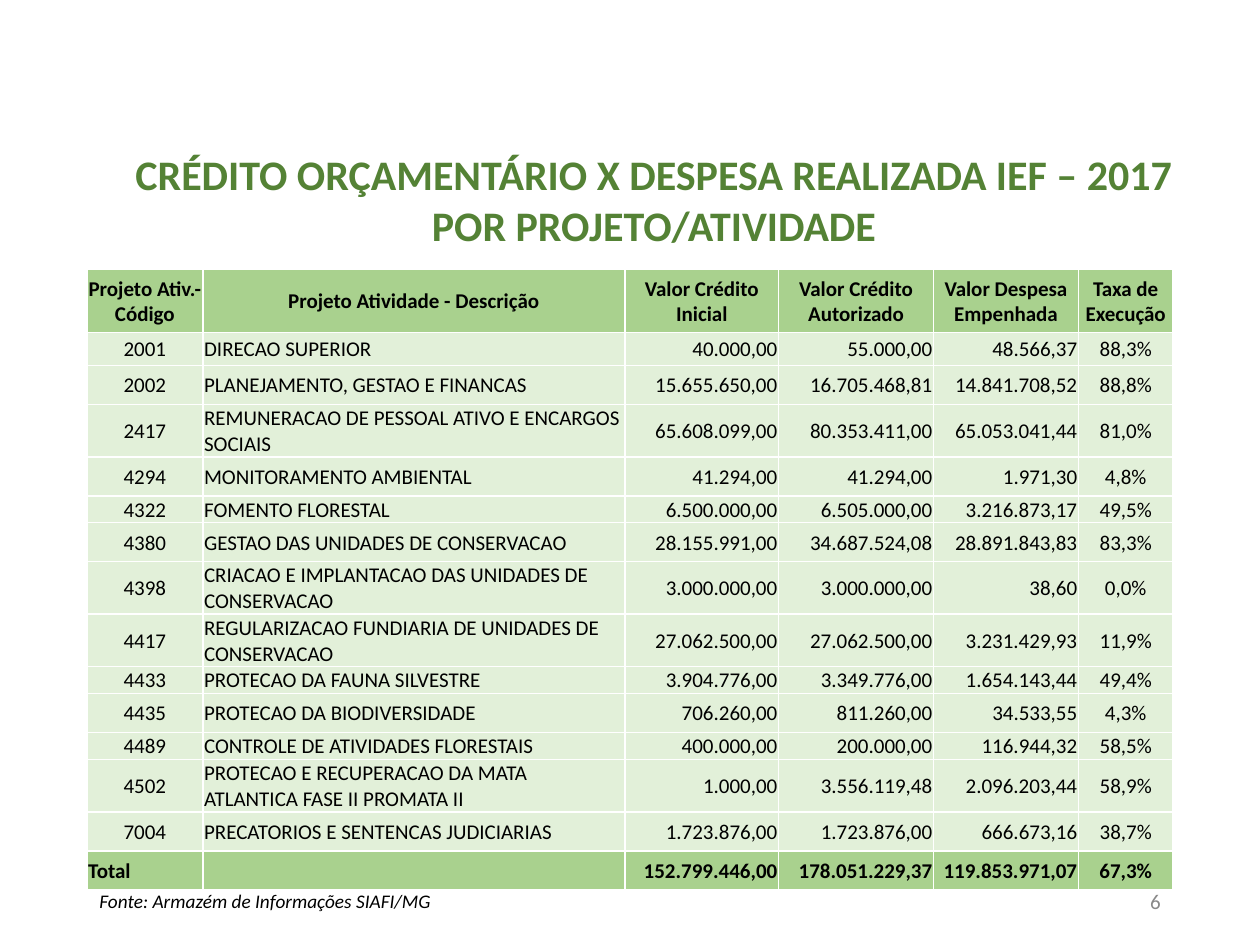
from typing import NamedTuple

from lxml import etree
from pptx import Presentation
from pptx.dml.color import RGBColor
from pptx.enum.text import MSO_ANCHOR, MSO_AUTO_SIZE, PP_ALIGN
from pptx.oxml.ns import qn
from pptx.util import Emu, Inches, Pt

LEFT, CENTER, RIGHT = PP_ALIGN.LEFT, PP_ALIGN.CENTER, PP_ALIGN.RIGHT
TOP, MIDDLE = MSO_ANCHOR.TOP, MSO_ANCHOR.MIDDLE
TITLE_ONLY = 5
WIDTH, HEIGHT = Inches(10), Inches(7.5)
FONT = "Calibri"
COLORS = {
    "title": "548235",
    "band": "A9D18E",
    "body": "E2F0D9",
    "text": "000000",
    "border": "FFFFFF",
    "number": "898989",
}


class Area(NamedTuple):
    """Position and size in percent of the slide's size."""
    left: float
    top: float
    width: float
    height: float


class Column(NamedTuple):
    heading: str
    width: float
    align: PP_ALIGN


class Project(NamedTuple):
    height: float
    code: str
    name: str
    initial: str
    authorized: str
    spent: str
    rate: str


TITLE_AREA = Area(6.9, 15.07, 90, 11.6)
TABLE_AREA = Area(6.9, 28.53, 86.2, 65.47)
SOURCE_AREA = Area(6.9, 94, 79.5, 2.67)
NUMBER_AREA = Area(70.6, 92.67, 22.5, 5.33)

TITLE = ["CRÉDITO ORÇAMENTÁRIO X DESPESA REALIZADA IEF – 2017", "POR PROJETO/ATIVIDADE"]
COLUMNS = [
    Column("Projeto Ativ.- Código", 9.2, CENTER),
    Column("Projeto Atividade - Descrição", 33.5, LEFT),
    Column("Valor Crédito Inicial", 12.2, RIGHT),
    Column("Valor Crédito Autorizado", 12.3, RIGHT),
    Column("Valor Despesa Empenhada", 11.5, RIGHT),
    Column("Taxa de Execução", 7.5, CENTER),
]
# Row heights in percent of the slide's height
HEADER, FIRST, NORMAL, SLIM, TALL = 6.67, 3.47, 4.13, 2.13, 4.67
PROJECTS = [
    Project(FIRST, "2001", "DIRECAO SUPERIOR",
            "40.000,00", "55.000,00", "48.566,37", "88,3%"),
    Project(NORMAL, "2002", "PLANEJAMENTO, GESTAO E FINANCAS",
            "15.655.650,00", "16.705.468,81", "14.841.708,52", "88,8%"),
    Project(NORMAL, "2417", "REMUNERACAO DE PESSOAL ATIVO E ENCARGOS SOCIAIS",
            "65.608.099,00", "80.353.411,00", "65.053.041,44", "81,0%"),
    Project(NORMAL, "4294", "MONITORAMENTO AMBIENTAL",
            "41.294,00", "41.294,00", "1.971,30", "4,8%"),
    Project(SLIM, "4322", "FOMENTO FLORESTAL",
            "6.500.000,00", "6.505.000,00", "3.216.873,17", "49,5%"),
    Project(NORMAL, "4380", "GESTAO DAS UNIDADES DE CONSERVACAO",
            "28.155.991,00", "34.687.524,08", "28.891.843,83", "83,3%"),
    Project(NORMAL, "4398", "CRIACAO E IMPLANTACAO DAS UNIDADES DE CONSERVACAO",
            "3.000.000,00", "3.000.000,00", "38,60", "0,0%"),
    Project(TALL, "4417", "REGULARIZACAO FUNDIARIA DE UNIDADES DE CONSERVACAO",
            "27.062.500,00", "27.062.500,00", "3.231.429,93", "11,9%"),
    Project(SLIM, "4433", "PROTECAO DA FAUNA SILVESTRE",
            "3.904.776,00", "3.349.776,00", "1.654.143,44", "49,4%"),
    Project(NORMAL, "4435", "PROTECAO DA BIODIVERSIDADE",
            "706.260,00", "811.260,00", "34.533,55", "4,3%"),
    Project(SLIM, "4489", "CONTROLE DE ATIVIDADES FLORESTAIS",
            "400.000,00", "200.000,00", "116.944,32", "58,5%"),
    Project(NORMAL, "4502", "PROTECAO E RECUPERACAO DA MATA ATLANTICA FASE II PROMATA II",
            "1.000,00", "3.556.119,48", "2.096.203,44", "58,9%"),
    Project(NORMAL, "7004", "PRECATORIOS E SENTENCAS JUDICIARIAS",
            "1.723.876,00", "1.723.876,00", "666.673,16", "38,7%"),
]
TOTAL = Project(NORMAL, "Total", "",
                "152.799.446,00", "178.051.229,37", "119.853.971,07", "67,3%")


def across(percent: float) -> Emu:
    return Emu(round(WIDTH * percent / 100))


def down(percent: float) -> Emu:
    return Emu(round(HEIGHT * percent / 100))


def bounds(area: Area) -> tuple[Emu, Emu, Emu, Emu]:
    return across(area.left), down(area.top), across(area.width), down(area.height)


def write(frame, lines: list[str], align: PP_ALIGN, size: float, color: str, **styles) -> None:
    """Fill a text frame with one paragraph per line in a single format."""
    for index, line in enumerate(lines):
        para = frame.add_paragraph() if index else frame.paragraphs[0]
        para.alignment = align
        if not line:
            etree.SubElement(para._p, qn("a:endParaRPr"), sz=str(round(size * 100)))
            continue
        span = para.add_run()
        span.text = line
        span.font.color.rgb = RGBColor.from_string(COLORS[color])
        for name, value in {"name": FONT, "size": Pt(size), **styles}.items():
            setattr(span.font, name, value)


def add_label(page, area: Area, text: str, align: PP_ALIGN, size: float, color: str,
              **styles) -> None:
    frame = page.shapes.add_textbox(*bounds(area)).text_frame
    frame.word_wrap = True
    frame.vertical_anchor = MIDDLE
    write(frame, [text], align, size, color, **styles)


def add_borders(cell) -> None:
    properties = cell._tc.get_or_add_tcPr()
    for side in ("lnL", "lnR", "lnT", "lnB"):
        line = etree.SubElement(properties, qn(f"a:{side}"), w=str(Pt(1)))
        fill = etree.SubElement(line, qn("a:solidFill"))
        etree.SubElement(fill, qn("a:srgbClr"), val=COLORS["border"])


def fill_cell(cell, text: str, align: PP_ALIGN, fill: str, bold: bool) -> None:
    formats = {
        "margin_left": Inches(0.01),
        "margin_right": Inches(0.01),
        "margin_top": Inches(0.01),
        "margin_bottom": 0,
        "vertical_anchor": MIDDLE,
    }
    for name, value in formats.items():
        setattr(cell, name, value)
    add_borders(cell)
    cell.fill.solid()
    cell.fill.fore_color.rgb = RGBColor.from_string(COLORS[fill])
    write(cell.text_frame, [text], align, 12, "text", bold=bold)


def add_budget_table(page) -> None:
    rows = [Project(HEADER, *(column.heading for column in COLUMNS)), *PROJECTS, TOTAL]
    table = page.shapes.add_table(len(rows), len(COLUMNS), *bounds(TABLE_AREA)).table
    table.first_row = table.horz_banding = False
    for index, column in enumerate(COLUMNS):
        table.columns[index].width = across(column.width)
    for row_index, (height, *texts) in enumerate(rows):
        table.rows[row_index].height = down(height)
        is_header, is_total = row_index == 0, row_index == len(rows) - 1
        strong = is_header or is_total
        for column_index, (column, text) in enumerate(zip(COLUMNS, texts)):
            align = CENTER if is_header else column.align
            if is_total and column_index == 0:
                align = LEFT
            fill_cell(table.cell(row_index, column_index), text, align,
                      "band" if strong else "body", strong)


def add_title(page) -> None:
    title = page.shapes.title
    title.left, title.top, title.width, title.height = bounds(TITLE_AREA)
    frame = title.text_frame
    frame.auto_size = MSO_AUTO_SIZE.NONE
    frame.vertical_anchor = TOP
    write(frame, TITLE, CENTER, 24, "title", bold=True)


def main() -> None:
    deck = Presentation()
    deck.slide_width, deck.slide_height = WIDTH, HEIGHT
    page = deck.slides.add_slide(deck.slide_layouts[TITLE_ONLY])
    add_title(page)
    add_budget_table(page)
    add_label(page, SOURCE_AREA, "Fonte: Armazém de Informações SIAFI/MG", LEFT, 11, "text",
              italic=True)
    add_label(page, NUMBER_AREA, "6", RIGHT, 12, "number")
    deck.save("out.pptx")


if __name__ == "__main__":
    main()
